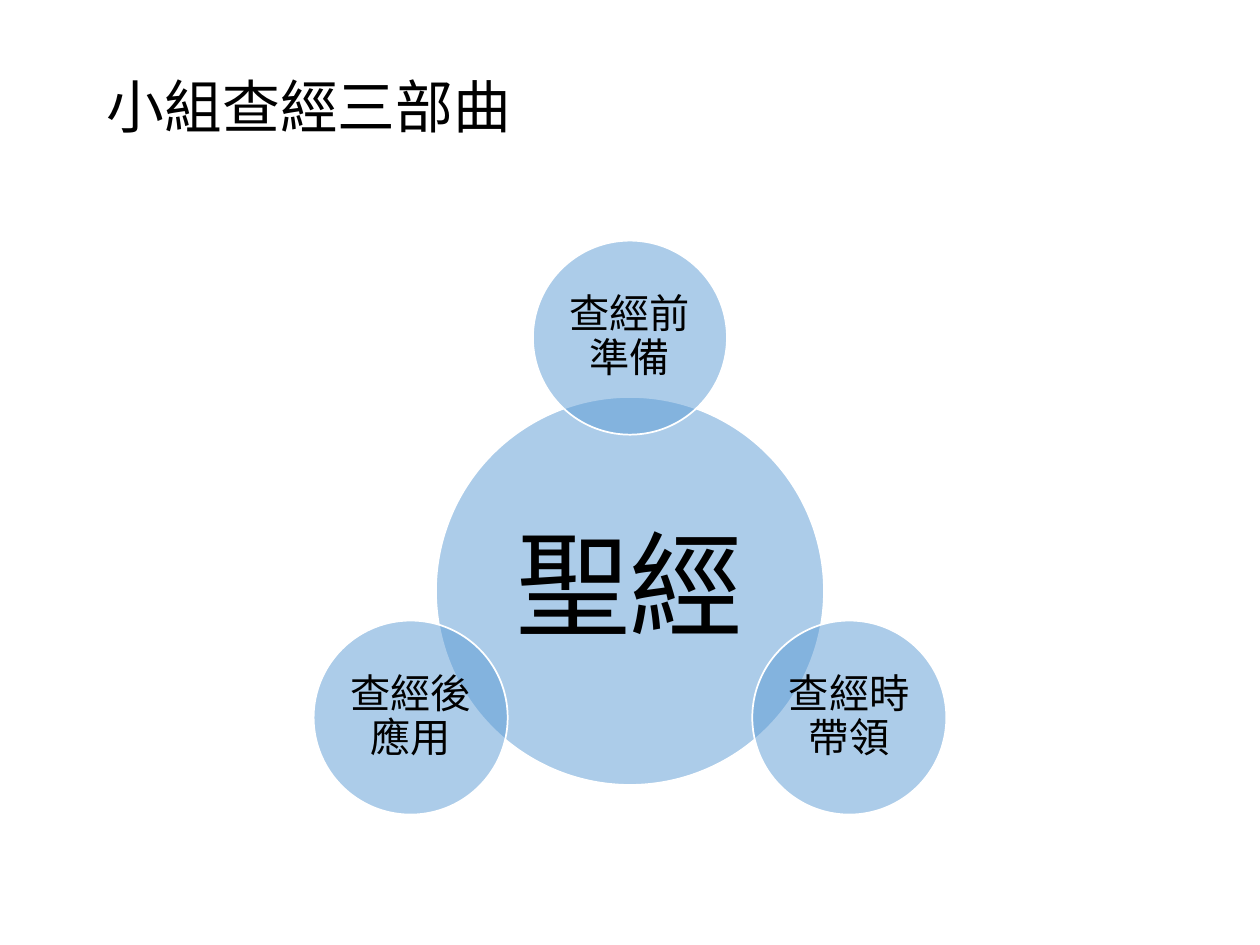
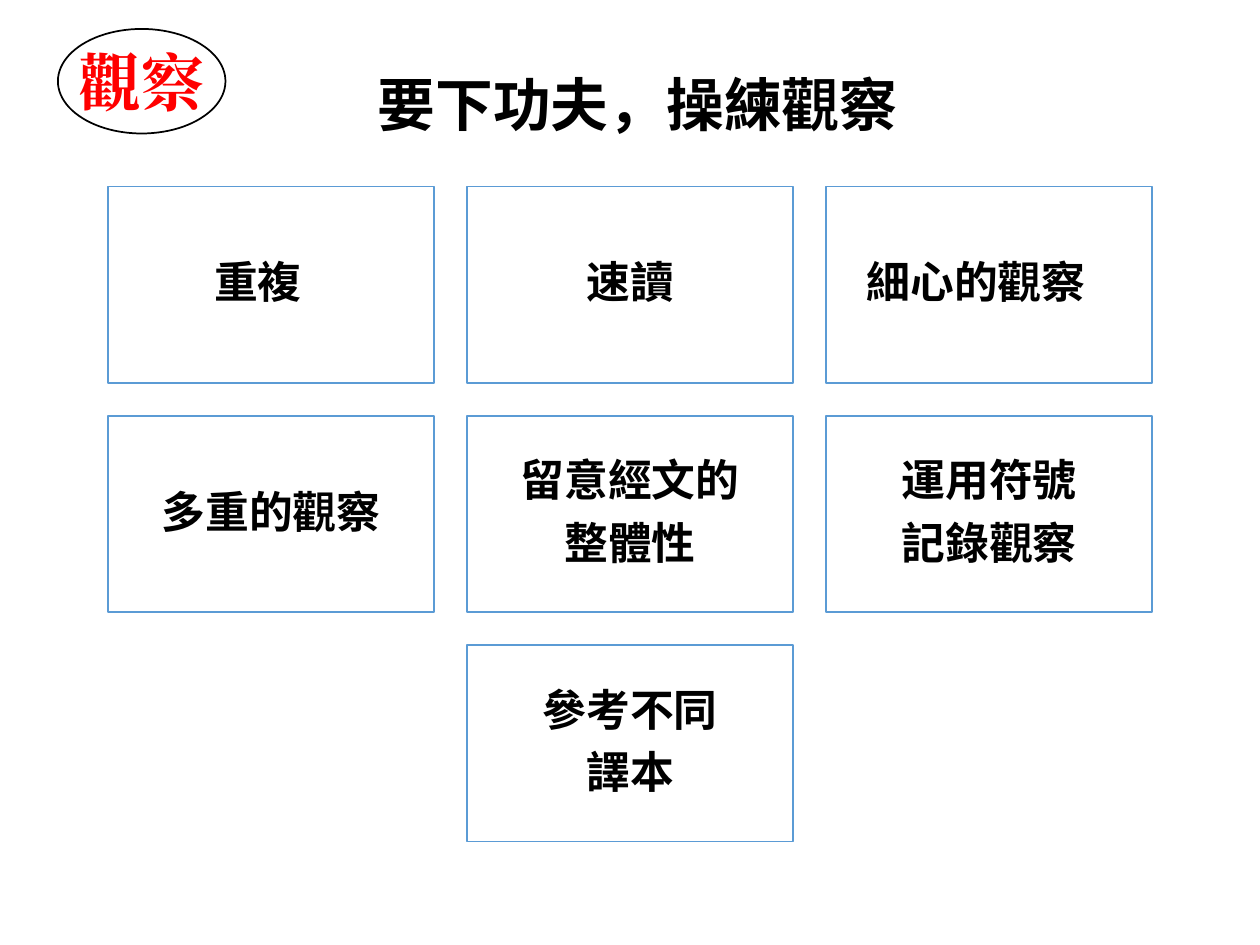
from math import cos, sin, radians
from pptx import Presentation
from pptx.dml.color import RGBColor as RGB
from pptx.enum.shapes import MSO_SHAPE as Kind
from pptx.enum.text import MSO_ANCHOR as Anchor, PP_ALIGN as Align
from pptx.oxml.ns import qn
from pptx.util import Inches, Pt
from lxml.etree import SubElement

# Content
CYCLE = {
    "title": "小組查經三部曲",
    "core": "聖經",
    "steps": ["查經前準備", "查經時帶領", "查經後應用"],
}
SKILLS = {
    "title": "要下功夫，操練觀察",
    "badge": "觀察",
    "rows": [
        ["重複 ", "速讀", "細心的觀察 "],
        ["多重的觀察", "留意經文的\n整體性", "運用符號\n記錄觀察"],
        ["參考不同\n譯本"],
    ],
}

# Theme
THEME = {
    "sans": "Noto Sans Mono", "serif": "Times New Roman",
    "ink": "000000", "paper": "FFFFFF", "blue": "5B9BD5", "red": "FF0000",
    "title": 33, "core": 65, "step": 23, "card": 25, "badge": 36,
    "tight": 0.9, "after": 0.35,
}


def assign(item, values):
    for name, value in values.items():
        setattr(item, name, value)


def write(shape, text, size, pad=(0.1, 0.05), bold=False, color="ink",
          face="sans", align=Align.CENTER, space=THEME["tight"],
          after=THEME["after"], wrap=True):
    frame = shape.text_frame
    side, edge = map(Inches, pad)
    assign(frame, {
        "word_wrap": wrap, "vertical_anchor": Anchor.MIDDLE,
        "margin_left": side, "margin_right": side,
        "margin_top": edge, "margin_bottom": edge,
    })
    points = THEME[size]
    for i, line in enumerate(text.split("\n")):
        para = frame.add_paragraph() if i else frame.paragraphs[0]
        assign(para, {"alignment": align, "line_spacing": space,
                      "space_after": Pt(points * after)})
        run = para.add_run()
        run.text = line
        assign(run.font, {"name": THEME[face], "size": Pt(points), "bold": bold})
        run.font.color.rgb = RGB.from_string(THEME[color])
        # East Asian glyphs need their own typeface entry
        SubElement(run.font._element, qn("a:ea"), typeface=THEME[face])


def draw(slide, kind, box, fill, line, alpha=None):
    shape = slide.shapes.add_shape(kind, *map(Inches, box))
    shape.shadow.inherit = False
    shape.fill.solid()
    shape.fill.fore_color.rgb = RGB.from_string(THEME[fill])
    shape.line.color.rgb = RGB.from_string(THEME[line])
    shape.line.width = Pt(1)
    if alpha:
        tint = shape.fill._xPr.find(".//" + qn("a:srgbClr"))
        SubElement(tint, qn("a:alpha"), val=str(alpha * 1000))
    return shape


def start(deck, title, box, bold=False):
    slide = deck.slides.add_slide(deck.slide_layouts[6])
    label = slide.shapes.add_textbox(*map(Inches, box))
    write(label, title, "title", bold=bold, align=Align.LEFT, after=0)
    return slide


def disc(slide, x, y, size, text, style, pad):
    box = (x - size / 2, y - size / 2, size, size)
    shape = draw(slide, Kind.OVAL, box, "blue", "paper", alpha=50)
    write(shape, text, style, pad=(pad, pad))


def cycle(deck):
    slide = start(deck, CYCLE["title"], (0.75, 0, 8.5, 1.75))
    mid, level, reach, big = 5, 4.69, 2.01, 3.08
    disc(slide, mid, level, big, CYCLE["core"], "core", 0.09)
    # Steps sit evenly around the core, clockwise from the top
    steps = CYCLE["steps"]
    for i, text in enumerate(steps):
        turn = radians(360 * i / len(steps))
        disc(slide, mid + reach * sin(turn), level - reach * cos(turn),
             big / 2, text, "step", 0.03)


def skills(deck):
    slide = start(deck, SKILLS["title"], (2.9, 0.23, 6.8, 1.25), bold=True)
    # Card rows, each centred on the slide
    wide, high, gap, top, mid = 2.59, 1.56, 0.26, 1.48, 5
    for r, row in enumerate(SKILLS["rows"]):
        left = mid - (len(row) * (wide + gap) - gap) / 2
        for c, text in enumerate(row):
            box = (left + c * (wide + gap), top + r * (high + gap), wide, high)
            card = draw(slide, Kind.RECTANGLE, box, "paper", "blue")
            write(card, text, "card", pad=(0.1, 0.1), bold=True)
    # Corner badge
    badge = draw(slide, Kind.OVAL, (0.46, 0.23, 1.33, 0.83), "paper", "ink")
    write(badge, SKILLS["badge"], "badge", bold=True, color="red",
          face="serif", space=1.0, after=0, wrap=False)


def main():
    deck = Presentation()
    assign(deck, {"slide_width": Inches(10), "slide_height": Inches(7.5)})
    cycle(deck)
    skills(deck)
    deck.save("out.pptx")


if __name__ == "__main__":
    main()
